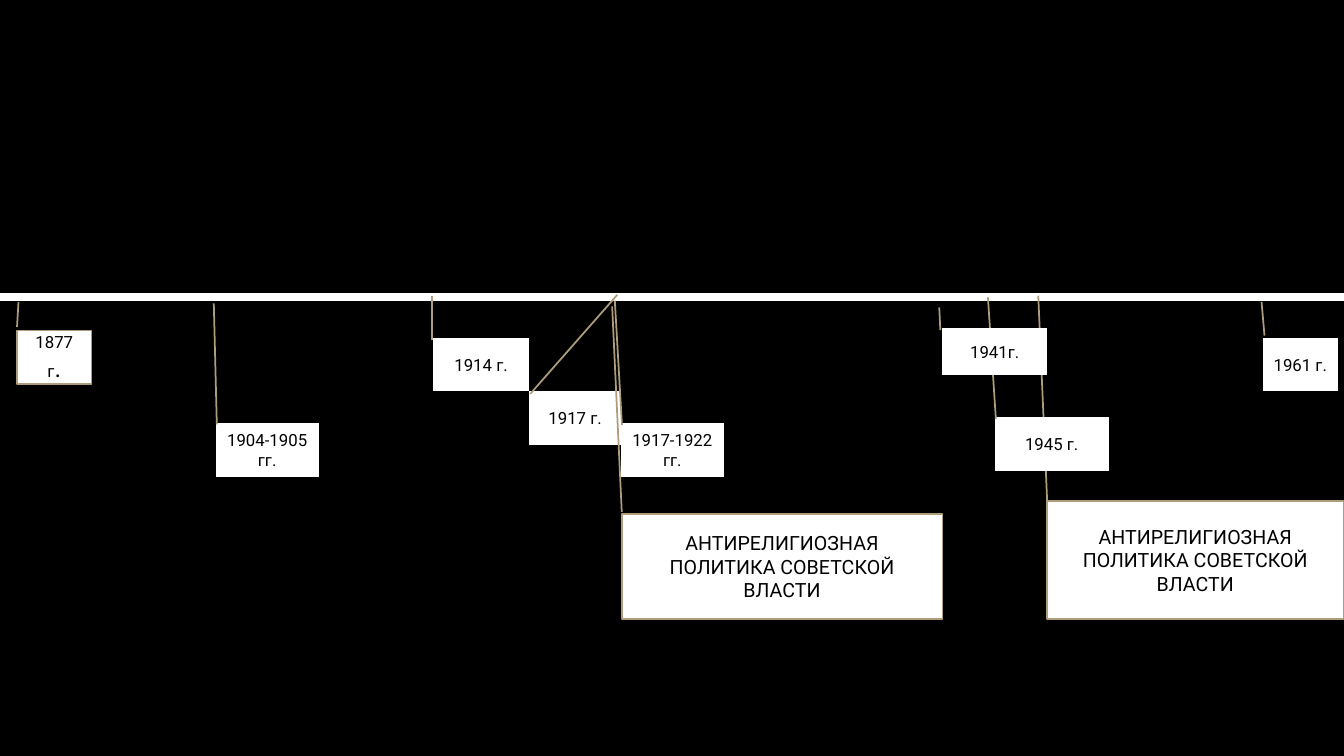
"""Build a timeline slide of dated callouts hanging from a horizontal axis."""
from lxml.etree import SubElement
from pptx import Presentation
from pptx.dml.color import RGBColor
from pptx.enum.shapes import MSO_CONNECTOR, MSO_SHAPE
from pptx.enum.text import MSO_ANCHOR, PP_ALIGN
from pptx.oxml.ns import qn
from pptx.util import Cm, Pt

BLACK = RGBColor(0x00, 0x00, 0x00)
WHITE = RGBColor(0xFF, 0xFF, 0xFF)
SAND = RGBColor(0xAD, 0x9D, 0x7B)

FRAMED = MSO_SHAPE.LINE_CALLOUT_1
PLAIN = MSO_SHAPE.LINE_CALLOUT_1_NO_BORDER
SLIDE_WIDTH, SLIDE_HEIGHT = 33.87, 19.05
AXIS_TOP = 7.49
DATE_HEIGHT = 1.35
DATE_SIZE, POLICY_SIZE = 12, 14
POLICY = "АНТИРЕЛИГИОЗНАЯ ПОЛИТИКА СОВЕТСКОЙ ВЛАСТИ"

EVENTS = [
    (FRAMED, "1877 г", DATE_SIZE, (0.43, 8.33, 1.88, DATE_HEIGHT), (-0.07, 0, -0.53, 0.02)),
    (PLAIN, "1961 г.", DATE_SIZE, (31.83, 8.51, 1.88, DATE_HEIGHT), (-0.04, 0.02, -0.67, -0.02)),
    (PLAIN, "1904-1905 гг.", DATE_SIZE, (5.44, 10.67, 2.59, DATE_HEIGHT), (0.02, 0.01, -2.24, -0.02)),
    (PLAIN, "1917 г.", DATE_SIZE, (13.34, 9.86, 2.31, DATE_HEIGHT), (0.05, 0.01, -1.8, 0.96)),
    (PLAIN, "1914 г.", DATE_SIZE, (10.92, 8.51, 2.41, DATE_HEIGHT), (0.05, -0.01, -0.77, -0.01)),
    (FRAMED, POLICY, POLICY_SIZE, (15.67, 12.95, 8.08, 2.64), (-0.02, 0, -1.98, -0.03)),
    (PLAIN, "1917-1922 гг.", DATE_SIZE, (15.65, 10.67, 2.59, DATE_HEIGHT), (0.03, 0.01, -2.29, -0.06)),
    (FRAMED, POLICY, POLICY_SIZE, (26.39, 12.62, 7.47, 2.97), (0, 0, -1.74, -0.03)),
    (PLAIN, "1945 г.", DATE_SIZE, (25.07, 10.52, 2.87, DATE_HEIGHT), (0.03, 0.01, -2.24, -0.06)),
    (PLAIN, "1941г.", DATE_SIZE, (23.75, 8.26, 2.64, 1.19), (0.05, -0.02, -0.43, -0.03)),
]


def paint_background(slide):
    """Fill the slide background with black."""
    fill = slide.background.fill
    fill.solid()
    fill.fore_color.rgb = BLACK


def add_axis(slide):
    """Draw the time axis across the whole slide."""
    axis = slide.shapes.add_connector(
        MSO_CONNECTOR.STRAIGHT, Cm(0), Cm(AXIS_TOP), Cm(SLIDE_WIDTH), Cm(AXIS_TOP))
    axis.line.color.rgb = WHITE
    axis.line.width = Pt(6)
    SubElement(axis.element.spPr, qn("a:effectLst"))


def add_event(slide, outline, label, size, box, pointer):
    """Add a callout whose pointer reaches up to the axis; return its paragraph."""
    event = slide.shapes.add_shape(outline, *map(Cm, box))
    for index, ratio in enumerate(pointer):
        event.adjustments[index] = ratio
    event.shadow.inherit = False
    event.fill.solid()
    event.fill.fore_color.rgb = WHITE
    event.line.color.rgb = SAND
    event.line.width = Pt(1.25)
    frame = event.text_frame
    frame.word_wrap = True
    frame.vertical_anchor = MSO_ANCHOR.MIDDLE
    caption = frame.paragraphs[0]
    caption.alignment = PP_ALIGN.CENTER
    caption.add_run().text = label
    caption.font.name = "Roboto"
    caption.font.size = Pt(size)
    caption.font.color.rgb = BLACK
    return caption


def main():
    """Assemble the slide and save it."""
    deck = Presentation()
    deck.slide_width, deck.slide_height = Cm(SLIDE_WIDTH), Cm(SLIDE_HEIGHT)
    slide = deck.slides.add_slide(deck.slide_layouts[6])
    paint_background(slide)
    add_axis(slide)
    captions = [add_event(slide, *event) for event in EVENTS]
    full_stop = captions[0].add_run()
    full_stop.text = "."
    full_stop.font.size = Pt(18)
    deck.save("out.pptx")


if __name__ == "__main__":
    main()
